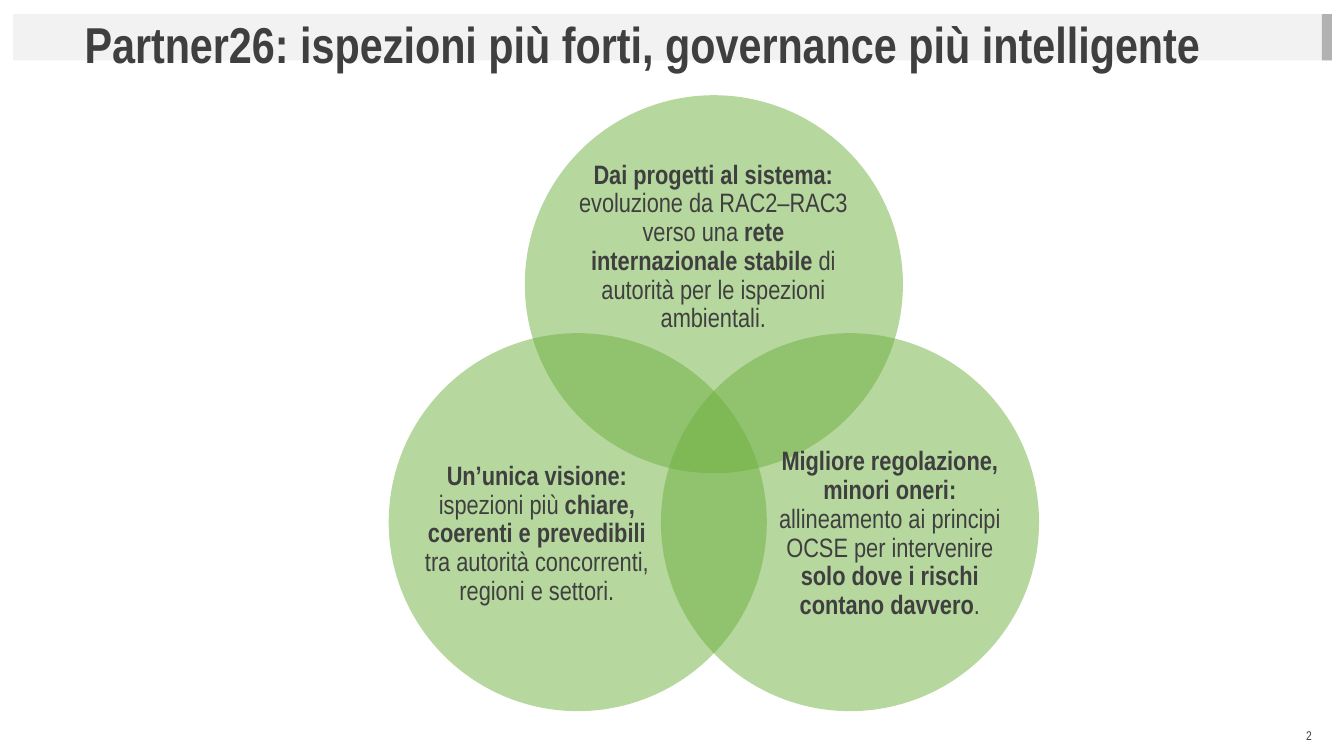
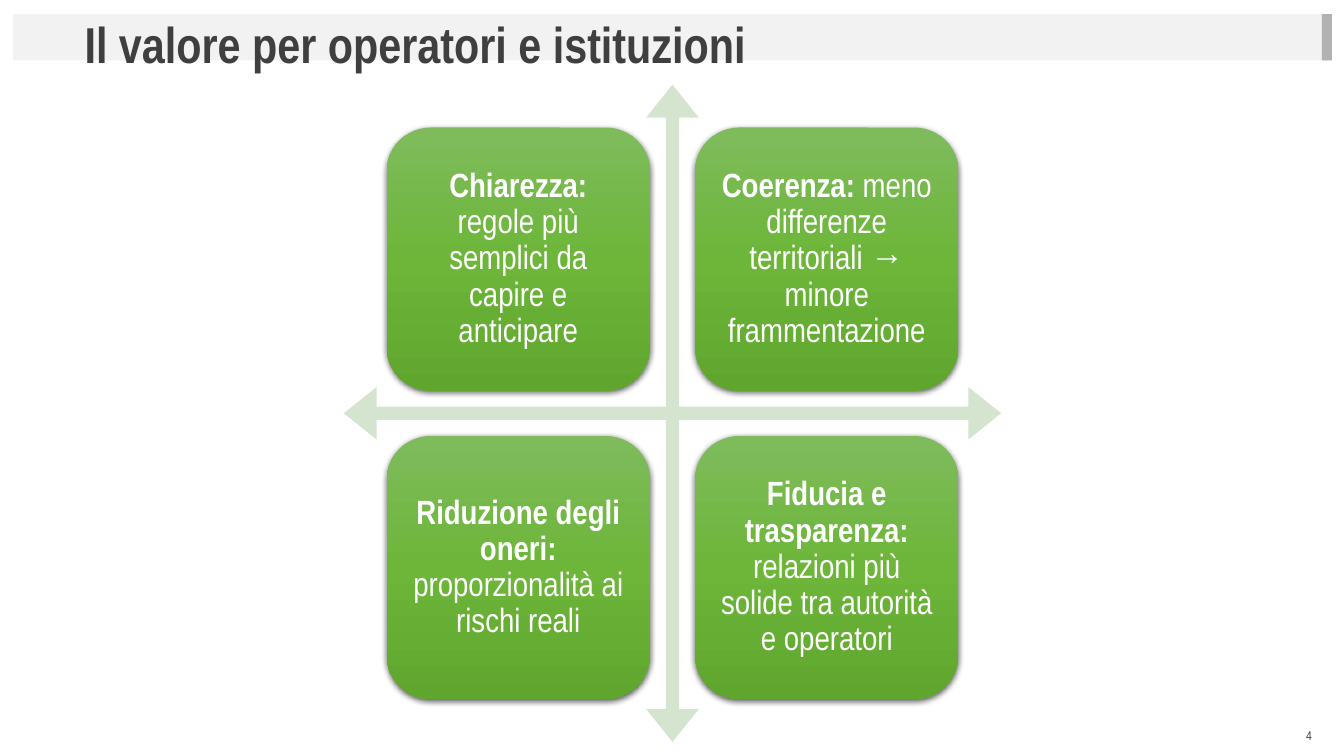
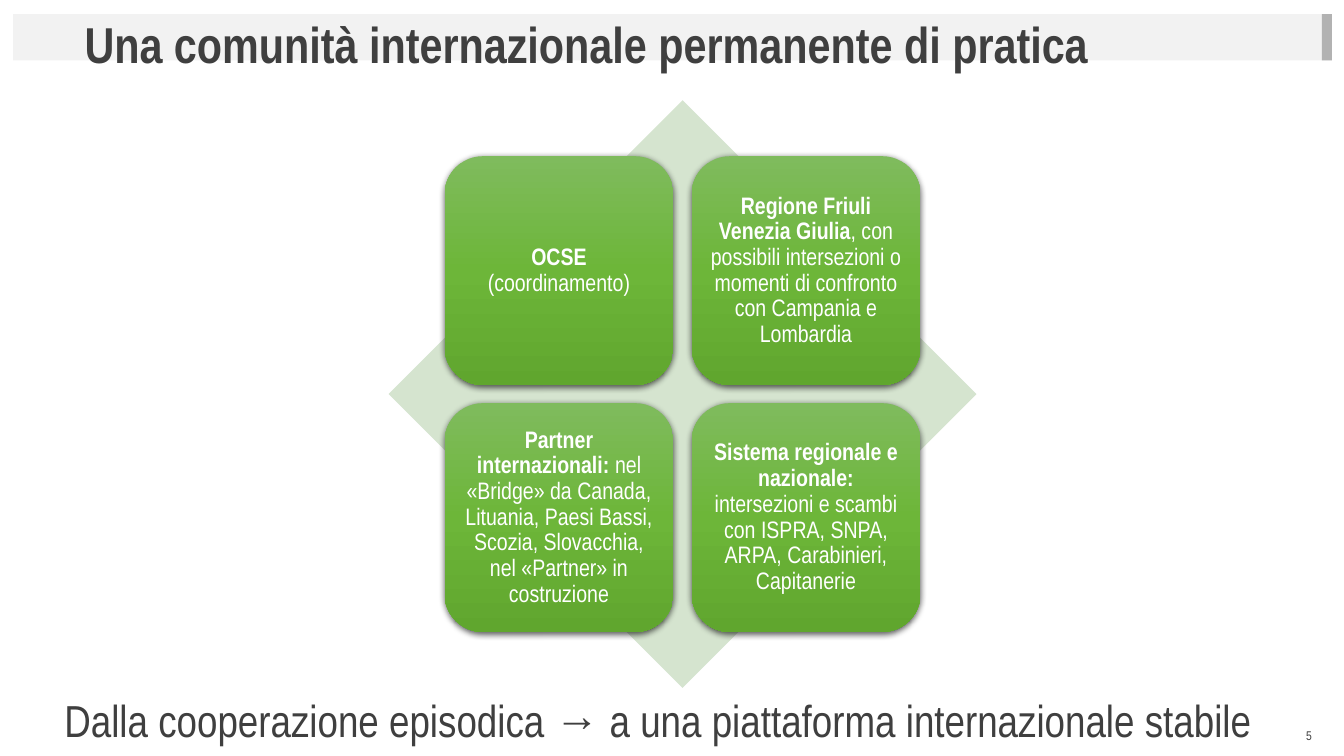
from lxml import etree
from pptx import Presentation
from pptx.dml.color import RGBColor
from pptx.enum.shapes import MSO_SHAPE
from pptx.enum.text import MSO_ANCHOR, PP_ALIGN
from pptx.oxml import parse_xml
from pptx.oxml.ns import nsdecls, qn
from pptx.util import Inches, Pt

RECT, OVAL, ROUND = MSO_SHAPE.RECTANGLE, MSO_SHAPE.OVAL, MSO_SHAPE.ROUNDED_RECTANGLE
CROSS, DIAMOND = MSO_SHAPE.QUAD_ARROW, MSO_SHAPE.DIAMOND
TOP, MIDDLE = MSO_ANCHOR.TOP, MSO_ANCHOR.MIDDLE
LEFT, CENTER, RIGHT = PP_ALIGN.LEFT, PP_ALIGN.CENTER, PP_ALIGN.RIGHT

FACE = "Arial Narrow"
COLORS = {
    "band": "F2F2F2", "tab": "B2B2B2", "ink": "3F3F3F", "white": "FFFFFF",
    "green": "6EB03F", "pale": "D5E4CF", "black": "000000",
    "light": "7FBB5D", "mid": "6DB639", "dark": "60A62E",
}
FADE = [(0, "light"), (50, "mid"), (100, "dark")]

# Text formats
FORMATS = {
    "title": {"size": 36, "color": "ink", "align": LEFT, "anchor": TOP, "line": 0.9, "pad": (0.1, 0.05)},
    "page": {"size": 9, "color": "ink", "align": RIGHT, "anchor": MIDDLE, "line": 1, "pad": (0.1, 0.05)},
    "venn": {"size": 19, "color": "ink", "align": CENTER, "anchor": MIDDLE, "line": 0.9, "pad": (0, 0)},
    "large": {"size": 24, "color": "white", "align": CENTER, "anchor": MIDDLE, "line": 0.9, "pad": (0.1, 0.1)},
    "small": {"size": 17, "color": "white", "align": CENTER, "anchor": MIDDLE, "line": 0.9, "pad": (0.07, 0.07)},
    "close": {"size": 32, "color": "ink", "align": LEFT, "anchor": TOP, "line": 1, "pad": (0.1, 0.05)},
}

# Content: the parts of each text are bold and plain in turn
VENN = {
    "title": "Partner26: ispezioni più forti, governance più intelligente",
    "page": "2",
    "mid": (7.08, 4.0),
    "size": 3.75,
    # Circle offset from the middle, text box, text
    "sets": [
        ((0, -1.18), (5.7, 1.61, 2.75, 1.69),
         ["Dai progetti al sistema:", " evoluzione da RAC2–RAC3 verso una ",
          "rete internazionale stabile", " di autorità per le ispezioni ambientali."]),
        ((1.35, 1.18), (7.7, 4.27, 2.25, 2.06),
         ["Migliore regolazione, minori oneri:",
          " allineamento ai principi OCSE per intervenire ",
          "solo dove i rischi contano davvero", "."]),
        ((-1.35, 1.18), (4.2, 4.27, 2.25, 2.06),
         ["Un’unica visione:", " ispezioni più ", "chiare, coerenti e prevedibili",
          " tra autorità concorrenti, regioni e settori."]),
    ],
}
VALUE = {
    "title": "Il valore per operatori e istituzioni",
    "page": "4",
    "back": (CROSS, 6.52, [0.02, 0.04, 0.05]),
    "mid": (6.67, 4.1),
    "card": 2.61, "gap": 0.45, "format": "large",
    "cards": [
        ["Chiarezza:", " regole più semplici da capire e anticipare"],
        ["Coerenza:", " meno differenze territoriali → minore frammentazione"],
        ["Riduzione degli oneri:", " proporzionalità ai rischi reali"],
        ["Fiducia e trasparenza:", " relazioni più solide tra autorità e operatori"],
    ],
}
GROUP = {
    "title": "Una comunità internazionale permanente di pratica",
    "page": "5",
    "back": (DIAMOND, 5.83, []),
    "mid": (6.77, 3.91),
    "card": 2.27, "gap": 0.18, "format": "small",
    "cards": [
        ["OCSE", " (coordinamento)"],
        ["Regione Friuli Venezia Giulia",
         ", con possibili intersezioni o momenti di confronto con Campania e Lombardia"],
        ["Partner internazionali:",
         " nel «Bridge» da Canada, Lituania, Paesi Bassi, Scozia, Slovacchia, "
         "nel «Partner» in costruzione"],
        ["Sistema regionale e nazionale:",
         " intersezioni e scambi con ISPRA, SNPA, ARPA, Carabinieri, Capitanerie"],
    ],
}
CLOSE = "Dalla cooperazione episodica → a una piattaforma internazionale stabile"


def paint(name):
    return RGBColor.from_string(COLORS[name])


def write(shape, parts, name):
    """Fill a shape with parts that are bold and plain in turn."""
    form = FORMATS[name]
    frame = shape.text_frame
    wide, high = map(Inches, form["pad"])
    for key, value in {
        "word_wrap": True, "vertical_anchor": form["anchor"],
        "margin_left": wide, "margin_right": wide,
        "margin_top": high, "margin_bottom": high,
    }.items():
        setattr(frame, key, value)
    para = frame.paragraphs[0]
    para.alignment, para.line_spacing = form["align"], form["line"]
    for i, part in enumerate(parts):
        if not part:
            continue
        run = para.add_run()
        run.text = part
        for key, value in {"name": FACE, "size": Pt(form["size"]), "bold": i % 2 == 0}.items():
            setattr(run.font, key, value)
        run.font.color.rgb = paint(form["color"])


def label(slide, at, parts, name):
    write(slide.shapes.add_textbox(*map(Inches, at)), parts, name)


def draw(slide, kind, at, color):
    shape = slide.shapes.add_shape(kind, *map(Inches, at))
    shape.shadow.inherit = False
    shape.fill.solid()
    shape.fill.fore_color.rgb = paint(color)
    shape.line.fill.background()
    return shape


def square(mid, size):
    """Place of a square around its middle."""
    return mid[0] - size / 2, mid[1] - size / 2, size, size


def fade(shape):
    """Turn the fill opaque-to-half: 50% alpha."""
    color = shape._element.spPr.find(qn("a:solidFill"))[0]
    etree.SubElement(color, qn("a:alpha"), val="50000")


def gloss(shape):
    """Give a card its vertical gradient and soft shadow."""
    props = shape._element.spPr
    stops = "".join(
        f'<a:gs pos="{pos * 1000}"><a:srgbClr val="{COLORS[name]}"/></a:gs>' for pos, name in FADE)
    props.replace(props.find(qn("a:solidFill")), parse_xml(
        f'<a:gradFill {nsdecls("a")} rotWithShape="1"><a:gsLst>{stops}</a:gsLst>'
        '<a:lin ang="5400000" scaled="0"/></a:gradFill>'))
    props.find(qn("a:effectLst")).append(parse_xml(
        f'<a:outerShdw {nsdecls("a")} blurRad="{Pt(4.5)}" dist="{Pt(1.5)}" dir="5400000" '
        f'algn="ctr" rotWithShape="0"><a:srgbClr val="{COLORS["black"]}">'
        '<a:alpha val="63000"/></a:srgbClr></a:outerShdw>'))


def start(deck, data):
    """Add a slide with band, title and page number."""
    slide = deck.slides.add_slide(deck.slide_layouts[6])
    draw(slide, RECT, (0.13, 0.14, 13.08, 0.46), "band")
    draw(slide, RECT, (13.11, 0.14, 0.1, 0.46), "tab")
    label(slide, (0.74, 0.15, 12.37, 0.6), [data["title"]], "title")
    label(slide, (10.11, 7.1, 3, 0.4), ["", data["page"]], "page")
    return slide


def circles(deck, data):
    slide = start(deck, data)
    x, y = data["mid"]
    for (dx, dy), box, parts in data["sets"]:
        fade(draw(slide, OVAL, square((x + dx, y + dy), data["size"]), "green"))
        label(slide, box, parts, "venn")


def matrix(deck, data):
    """Four cards in two rows over a backdrop."""
    slide = start(deck, data)
    x, y = data["mid"]
    kind, size, values = data["back"]
    back = draw(slide, kind, square((x, y), size), "pale")
    for i, value in enumerate(values):
        back.adjustments[i] = value
    step = data["card"] + data["gap"]
    for i, parts in enumerate(data["cards"]):
        row, col = divmod(i, 2)
        spot = x + (col - 0.5) * step, y + (row - 0.5) * step
        card = draw(slide, ROUND, square(spot, data["card"]), "mid")
        gloss(card)
        write(card, parts, data["format"])
    return slide


def main():
    deck = Presentation()
    deck.slide_width, deck.slide_height = Inches(13.33), Inches(7.5)
    circles(deck, VENN)
    matrix(deck, VALUE)
    last = matrix(deck, GROUP)
    label(last, (0.54, 6.82, 12.21, 0.64), ["", CLOSE], "close")
    deck.save("out.pptx")


if __name__ == "__main__":
    main()
